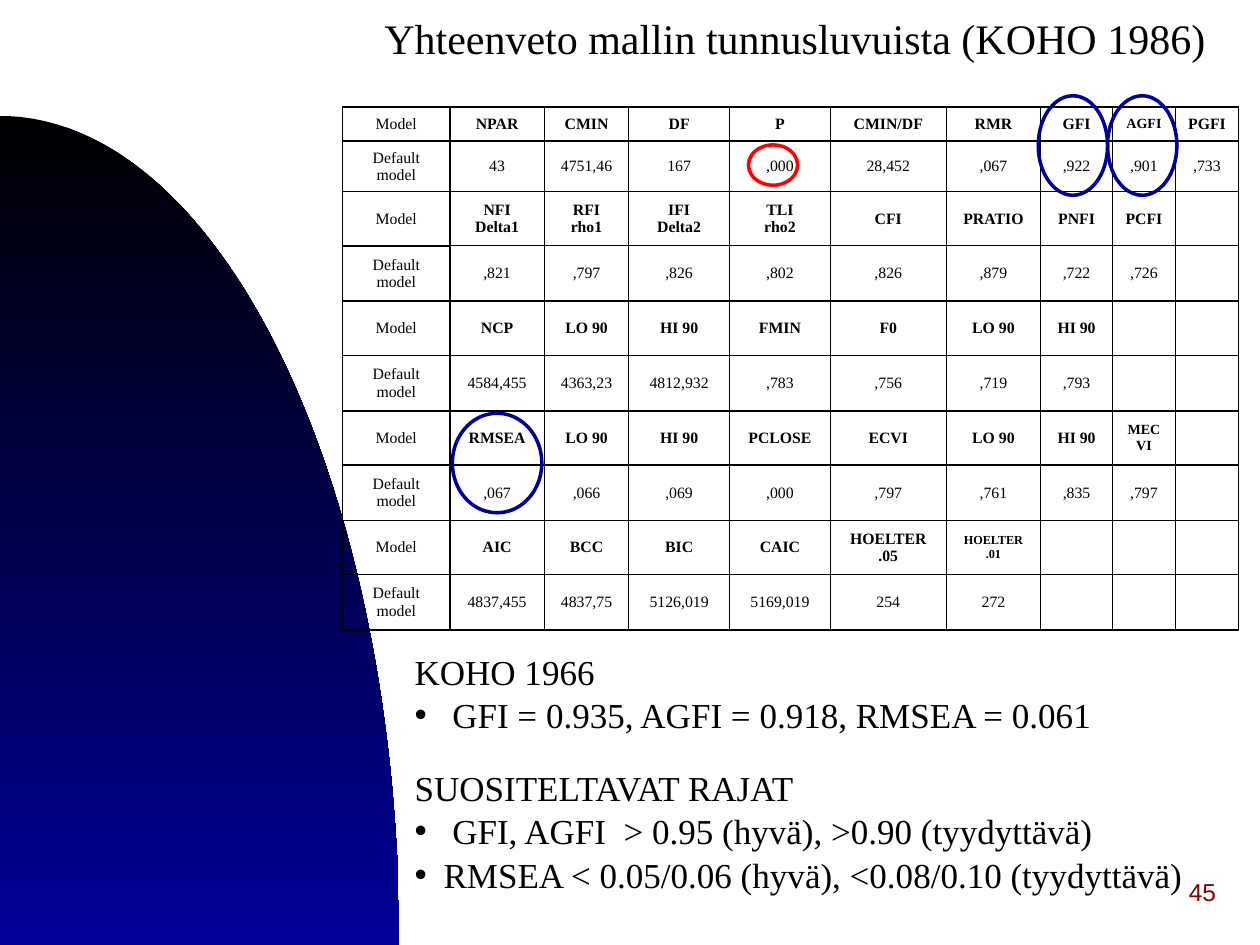
import math
from lxml import etree
from pptx import Presentation
from pptx.dml.color import RGBColor
from pptx.enum.shapes import MSO_SHAPE
from pptx.enum.text import MSO_ANCHOR, MSO_AUTO_SIZE, PP_ALIGN
from pptx.oxml.ns import qn
from pptx.util import Inches, Pt

OVAL = MSO_SHAPE.OVAL
MIDDLE, TOP = MSO_ANCHOR.MIDDLE, MSO_ANCHOR.TOP
LEFT, CENTER, RIGHT = PP_ALIGN.LEFT, PP_ALIGN.CENTER, PP_ALIGN.RIGHT
NO_AUTOFIT = MSO_AUTO_SIZE.NONE
COLORS = {"black": "000000", "navy": "000099", "red": "FF0000", "maroon": "800000"}
SERIF = "Times New Roman"


def format_paragraph(p, size, align, bold=False, font=SERIF, color="black"):
    p.alignment = align
    for r in p.runs:
        r.font.size = Pt(size)
        r.font.name = font
        r.font.bold = bold
        r.font.color.rgb = RGBColor.from_string(COLORS[color])


def set_border(cell, side, width):
    ln = etree.SubElement(cell._tc.get_or_add_tcPr(), qn(f"a:ln{side}"), w=str(Pt(width)))
    fill = etree.SubElement(ln, qn("a:solidFill"))
    etree.SubElement(fill, qn("a:srgbClr"), val=COLORS["black"])


prs = Presentation()
prs.slide_width, prs.slide_height = Inches(10), Inches(7.5)
s = prs.slides.add_slide(prs.slide_layouts[3])

arc = [(3.17 * math.sin(math.radians(a)), 7.5 - 6.58 * math.cos(math.radians(a)))
       for a in range(91)]
points = [(Inches(x), Inches(y)) for x, y in arc + [(0, 7.5)]]
builder = s.shapes.build_freeform(*points[0], scale=1.0)
builder.add_line_segments(points[1:], close=True)
sp = builder.convert_to_shape()
sp.shadow.inherit = False
sp.line.fill.background()
sp.fill.gradient()
sp.fill.gradient_angle = 270
for stop, position, color in zip(sp.fill.gradient_stops, (0, 1), ("black", "navy")):
    stop.position = position
    stop.color.rgb = RGBColor.from_string(COLORS[color])

sp = s.shapes.add_textbox(Inches(7.67), Inches(6.83), Inches(2.08), Inches(0.5))
tf = sp.text_frame
tf.word_wrap = True
tf.vertical_anchor = MIDDLE
tf.text = "45"
format_paragraph(tf.paragraphs[0], 14, RIGHT, font="Arial", color="maroon")

rows = [
    ["NPAR", "CMIN", "DF", "P", "CMIN/DF", "RMR", "GFI", "AGFI", "PGFI"],
    ["43", "4751,46", "167", ",000", "28,452", ",067", ",922", ",901", ",733"],
    ["NFI\vDelta1", "RFI\vrho1", "IFI\vDelta2", "TLI\vrho2", "CFI", "PRATIO", "PNFI", "PCFI"],
    [",821", ",797", ",826", ",802", ",826", ",879", ",722", ",726"],
    ["NCP", "LO 90", "HI 90", "FMIN", "F0", "LO 90", "HI 90"],
    ["4584,455", "4363,23", "4812,932", ",783", ",756", ",719", ",793"],
    ["RMSEA", "LO 90", "HI 90", "PCLOSE", "ECVI", "LO 90", "HI 90", "MECVI"],
    [",067", ",066", ",069", ",000", ",797", ",761", ",835", ",797"],
    ["AIC", "BCC", "BIC", "CAIC", "HOELTER\v.05", "HOELTER\v.01"],
    ["4837,455", "4837,75", "5126,019", "5169,019", "254", "272"],
]
small_sizes = {"AGFI": 8, "MECVI": 8, "HOELTER\v.01": 7}
col_widths = [0.85, 0.75, 0.67, 0.8, 0.8, 0.92, 0.75, 0.57, 0.5, 0.5]
row_heights = [0.27, 0.4] + [0.43, 0.44] * 4
table = s.shapes.add_table(len(rows), len(col_widths), Inches(2.72), Inches(0.85),
                           Inches(sum(col_widths)), Inches(sum(row_heights))).table
table.first_row = table.horz_banding = False
for column, width in zip(table.columns, col_widths):
    column.width = Inches(width)
last = len(col_widths) - 1
for i, values in enumerate(rows):
    table.rows[i].height = Inches(row_heights[i])
    header = i % 2 == 0
    texts = ["Model" if header else "Default model"] + values
    for j in range(last + 1):
        cell = table.cell(i, j)
        cell.vertical_anchor = MIDDLE
        if j < len(texts):
            cell.text = texts[j]
            format_paragraph(cell.text_frame.paragraphs[0], small_sizes.get(texts[j], 9),
                             CENTER, bold=header and j > 0)
        set_border(cell, "L", 1 if j < 2 else 0.75)
        set_border(cell, "R", 1 if j in (0, last) else 0.75)
        set_border(cell, "T", 1 if j == 0 or header or i == 1 else 0.75)
        set_border(cell, "B", 1 if j == 0 or not header or i == 0 else 0.75)
        cell.fill.background()

title, *bodies = s.placeholders
title.left, title.top, title.width, title.height = map(Inches, (2.95, 0.05, 6.8, 0.5))
tf = title.text_frame
tf.text = "Yhteenveto mallin tunnusluvuista (KOHO 1986)"
tf.word_wrap = True
tf.auto_size = NO_AUTOFIT
tf.vertical_anchor = TOP
format_paragraph(tf.paragraphs[0], 24, LEFT)

notes = [
    (5.11, 6.61, 0.77, ["KOHO 1966", " GFI = 0.935, AGFI = 0.918, RMSEA = 0.061"]),
    (6.03, 6.81, 1.1, ["SUOSITELTAVAT RAJAT",
                       " GFI, AGFI  > 0.95 (hyvä), >0.90 (tyydyttävä)",
                       "RMSEA < 0.05/0.06 (hyvä), <0.08/0.10 (tyydyttävä)"]),
]
for body, (top, width, height, lines) in zip(bodies, notes):
    body.left, body.top, body.width, body.height = map(Inches, (3.19, top, width, height))
    tf = body.text_frame
    tf.text = "\n".join(lines)
    tf.word_wrap = True
    tf.auto_size = NO_AUTOFIT
    tf.vertical_anchor = TOP
    for i, p in enumerate(tf.paragraphs):
        format_paragraph(p, 20, LEFT)
        p.space_before = Pt(1 if i else 0)
        pPr = p._p.get_or_add_pPr()
        indent = Inches(0.23) if i else 0
        pPr.set("marL", str(indent))
        pPr.set("indent", str(-indent))
        if i:
            etree.SubElement(pPr, qn("a:buFont"), typeface="Arial")
            etree.SubElement(pPr, qn("a:buChar"), char="•")
        else:
            etree.SubElement(pPr, qn("a:buNone"))

highlights = [
    (8.24, 0.76, 0.55, 0.79, "navy"),
    (8.79, 0.76, 0.55, 0.79, "navy"),
    (3.59, 3.28, 0.71, 0.79, "navy"),
    (5.94, 1.15, 0.39, 0.32, "red"),
]
for *box, color in highlights:
    sp = s.shapes.add_shape(OVAL, *map(Inches, box))
    sp.shadow.inherit = False
    sp.fill.background()
    sp.line.color.rgb = RGBColor.from_string(COLORS[color])
    sp.line.width = Pt(2)

prs.save("out.pptx")
